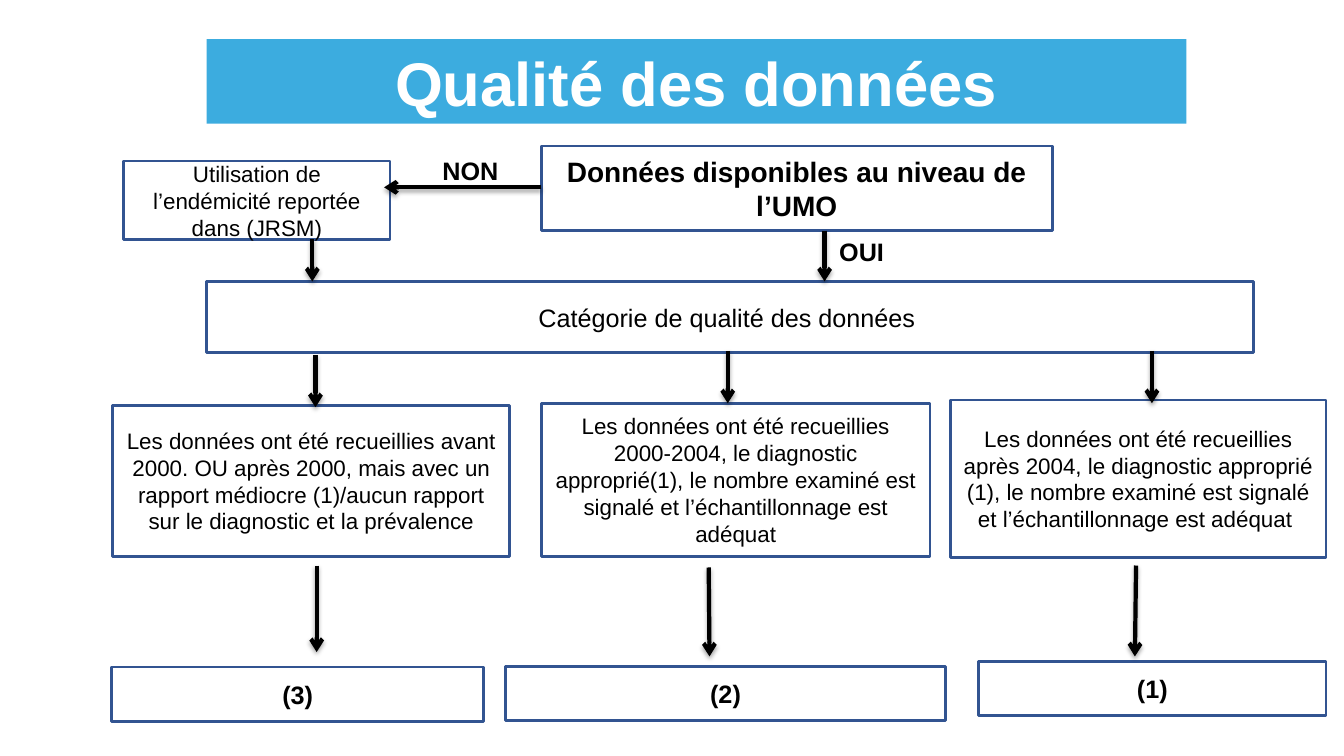
from lxml import etree
from pptx import Presentation
from pptx import util as u
from pptx.dml.color import RGBColor
from pptx.enum import shapes, text
from pptx.oxml import parse_xml
from pptx.oxml.ns import nsdecls, qn

SHADOW = f"""<a:effectLst {nsdecls("a")}>
  <a:outerShdw blurRad="40000" dist="23000" dir="5400000" rotWithShape="0">
    <a:srgbClr val="000000"><a:alpha val="35000"/></a:srgbClr>
  </a:outerShdw>
</a:effectLst>"""


def color(value):
    return RGBColor.from_string(value)


def write(frame, words, size=16, bold=False, ink="000000", align="CENTER",
          anchor="MIDDLE", font="Arial"):
    frame.word_wrap = True
    frame.vertical_anchor = getattr(text.MSO_ANCHOR, anchor)
    para = frame.paragraphs[0]
    para.alignment = getattr(text.PP_ALIGN, align)
    run = para.add_run()
    run.text = words
    run.font.name = font
    run.font.size = u.Pt(size)
    run.font.bold = bold
    run.font.color.rgb = color(ink)


class Chart:
    """Draws the parts of a flow chart on one slide; lengths are in cm."""

    border, ink, banner = "325491", "000000", "3CACDF"

    def __init__(self, slide):
        self.shapes = slide.shapes

    def rect(self, place):
        shape = self.shapes.add_shape(shapes.MSO_SHAPE.RECTANGLE, *map(u.Cm, place))
        shape.shadow.inherit = False
        return shape

    def title(self, words, *place):
        shape = self.rect(place)
        shape.fill.solid()
        shape.fill.fore_color.rgb = color(self.banner)
        shape.line.fill.background()
        write(shape.text_frame, words, size=44, bold=True, ink="FFFFFF")

    def box(self, words, *place, **style):
        shape = self.rect(place)
        shape.fill.background()
        shape.line.color.rgb = color(self.border)
        shape.line.width = u.Pt(2)
        write(shape.text_frame, words, ink=self.ink, **style)

    def label(self, words, *place):
        shape = self.shapes.add_textbox(*map(u.Cm, place))
        write(shape.text_frame, words, size=18, bold=True, ink=self.ink,
              align="LEFT", anchor="TOP")

    def arrow(self, *ends):
        line = self.shapes.add_connector(
            shapes.MSO_CONNECTOR.STRAIGHT, *map(u.Cm, ends))
        line.line.color.rgb = color(self.ink)
        line.line.width = u.Pt(3)
        props = line._element.spPr
        etree.SubElement(props.find(qn("a:ln")), qn("a:tailEnd"), type="arrow")
        props.append(parse_xml(SHADOW))


def main():
    deck = Presentation()
    deck.slide_width, deck.slide_height = u.Cm(33.87), u.Cm(19.05)
    chart = Chart(deck.slides.add_slide(deck.slide_layouts[6]))

    chart.title("Qualité des données", 5.21, 0.99, 24.69, 2.13)
    chart.box("Données disponibles au niveau de l’UMO",
              13.64, 3.68, 12.88, 2.13, size=20, bold=True)
    chart.box("Utilisation de l’endémicité reportée dans (JRSM)",
              3.12, 4.06, 6.71, 1.98)
    chart.box("Catégorie de qualité des données ",
              5.21, 7.09, 26.39, 1.8, size=18)

    chart.label("NON", 10.9, 3.78, 2.08, 1.02)
    chart.label("OUI", 20.9, 5.82, 2.51, 1.02)

    criteria = [
        ("Les données ont été recueillies avant 2000. OU après 2000, mais avec "
         "un rapport médiocre (1)/aucun rapport sur le diagnostic et la prévalence",
         2.84, 10.21, 10.01, 3.81),
        ("Les données ont été recueillies 2000-2004, le diagnostic approprié(1), "
         "le nombre examiné est signalé et l’échantillonnage est adéquat",
         13.64, 10.16, 9.8, 3.86),
        ("Les données ont été recueillies après 2004, le diagnostic approprié (1), "
         "le nombre examiné est signalé et l’échantillonnage est adéquat ",
         23.95, 10.08, 9.47, 3.96),
    ]
    for item in criteria:
        chart.box(*item)

    scores = [
        ("(3)", 2.82, 16.81, 9.37, 1.37),
        ("(2)", 12.75, 16.79, 11.07, 1.37),
        ("(1)", 24.66, 16.66, 8.76, 1.37),
    ]
    for item in scores:
        chart.box(*item, size=18, bold=True)

    arrows = [
        (13.64, 4.72, 9.68, 4.72),
        (7.87, 6.02, 7.87, 7.09),
        (20.78, 5.82, 20.78, 7.09),
        (7.95, 8.94, 7.95, 10.26),
        (18.34, 8.84, 18.34, 10.16),
        (29.03, 8.84, 29.03, 10.16),
        (7.98, 14.25, 7.98, 16.43),
        (17.86, 14.3, 17.88, 16.54),
        (28.63, 14.25, 28.6, 16.54),
    ]
    for ends in arrows:
        chart.arrow(*ends)

    deck.save("out.pptx")


if __name__ == "__main__":
    main()
